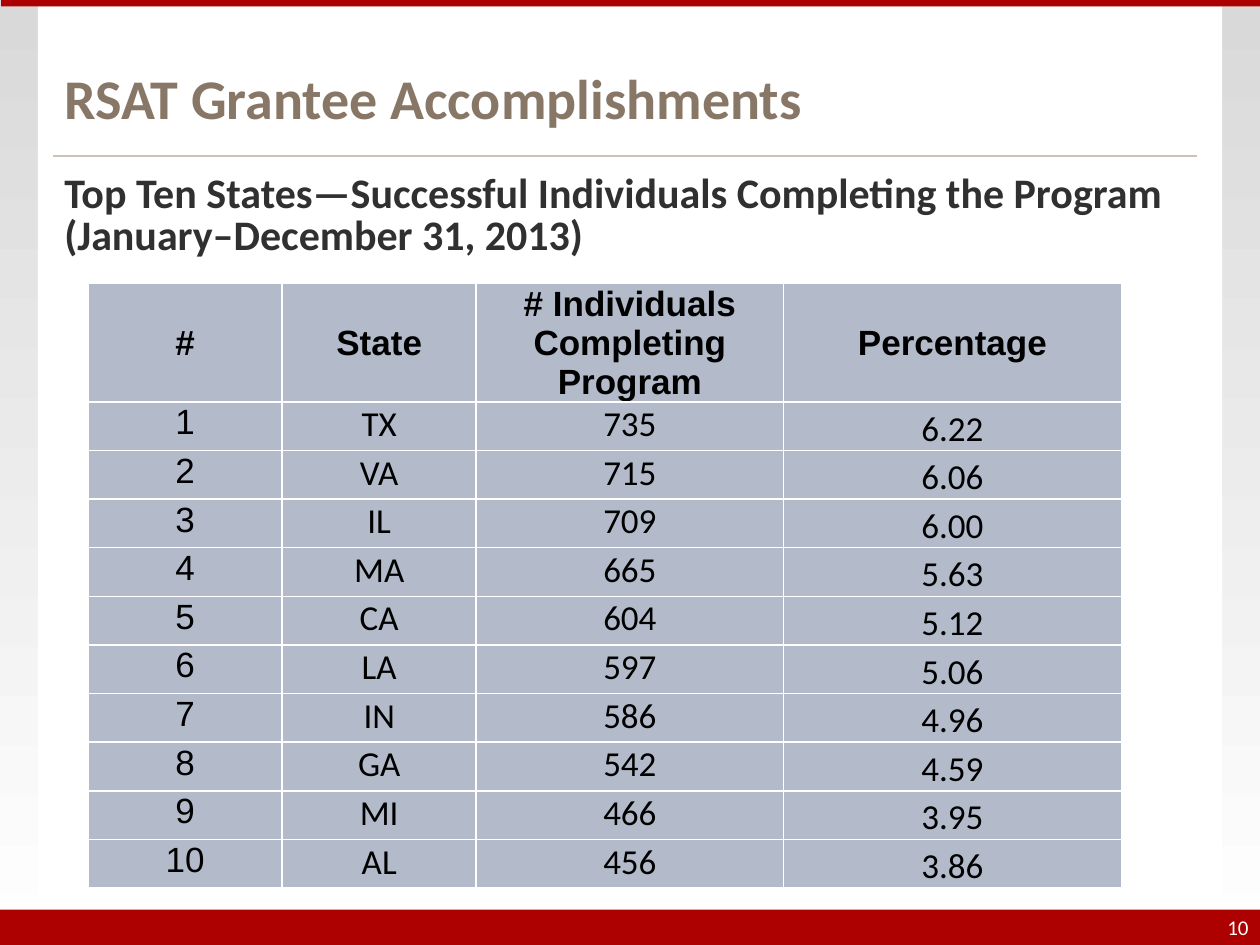
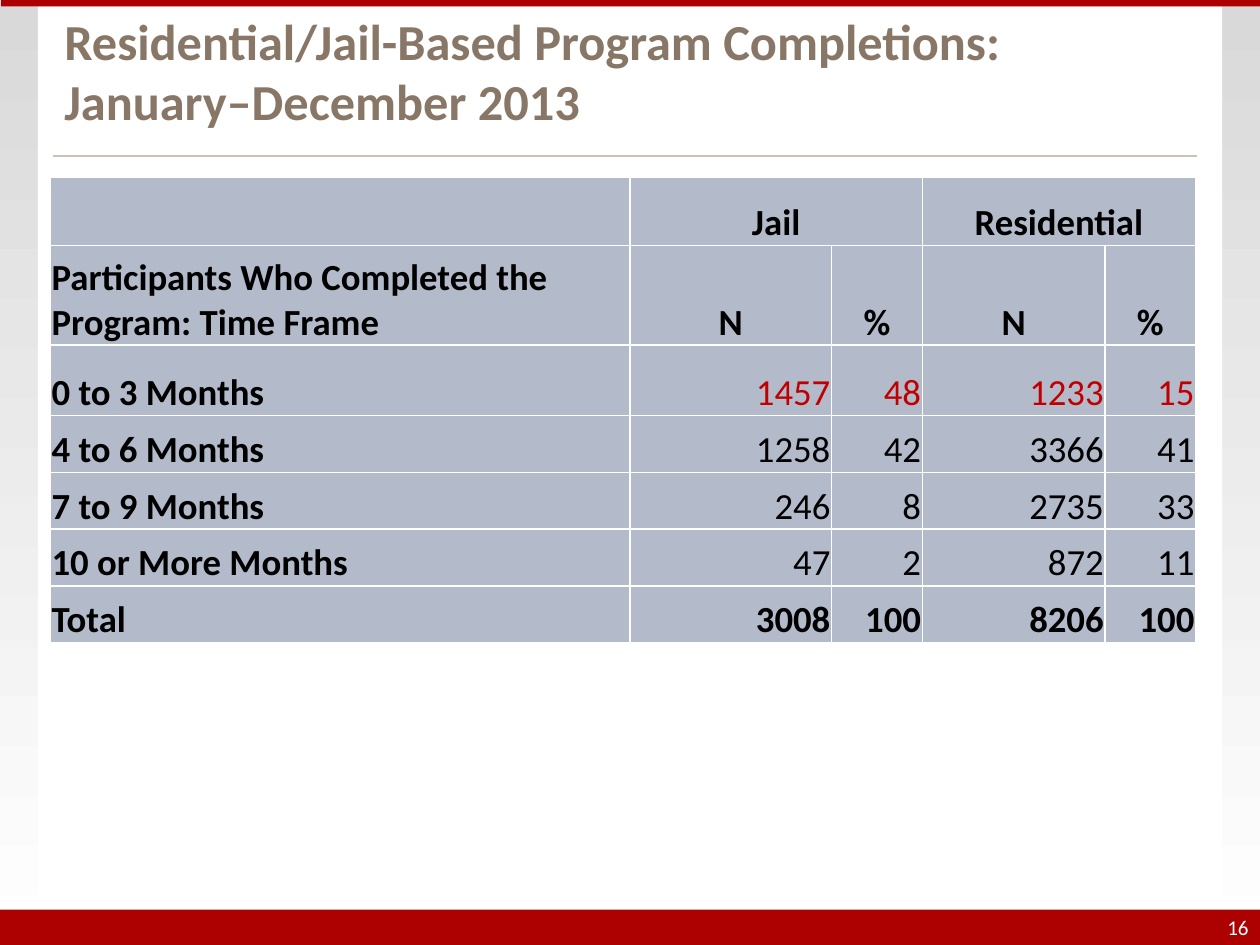
from lxml.etree import SubElement
from pptx import Presentation
from pptx.dml.color import RGBColor
from pptx.enum.shapes import MSO_CONNECTOR, MSO_SHAPE
from pptx.enum.text import MSO_ANCHOR, MSO_AUTO_SIZE, PP_ALIGN
from pptx.oxml.ns import qn
from pptx.util import Inches, Pt

WHITE = RGBColor(0xFF, 0xFF, 0xFF)
BLACK = RGBColor(0x00, 0x00, 0x00)
GREY = RGBColor(0xD9, 0xD9, 0xD9)
BAND_RED = RGBColor(0xAD, 0x01, 0x01)
RULE_TAN = RGBColor(0xCB, 0xC2, 0xB9)
TITLE_BROWN = RGBColor(0x88, 0x77, 0x66)
BODY_GREY = RGBColor(0x30, 0x30, 0x30)
CELL_BLUE = RGBColor(0xB3, 0xBB, 0xCB)
HIGHLIGHT_RED = RGBColor(0xC0, 0x00, 0x00)

TITLE_AND_BODY, TITLE_ONLY = 1, 5
BOX_MARGINS = (0.09, 0.04, 0.09, 0.04)
CELL_MARGINS = (0.01, 0.01, 0.01, 0)

BANDS = [
    ((0.3, 0.05, 9.4, 7.45), WHITE),
    ((0, 7.22, 10, 0.28), BAND_RED),
    ((0.01, 0, 10, 0.05), BAND_RED),
]

STATES_SUBTITLE = "Top Ten States—Successful Individuals Completing the Program (January–December 31, 2013)"
STATES_HEADER = ("#", "State", "# Individuals Completing Program", "Percentage")
STATES = [
    ("TX", "735", "6.22"),
    ("VA", "715", "6.06"),
    ("IL", "709", "6.00"),
    ("MA", "665", "5.63"),
    ("CA", "604", "5.12"),
    ("LA", "597", "5.06"),
    ("IN", "586", "4.96"),
    ("GA", "542", "4.59"),
    ("MI", "466", "3.95"),
    ("AL", "456", "3.86"),
]

COMPLETIONS = [
    ("", "Jail", "", "Residential", ""),
    ("Participants Who Completed the Program: Time Frame", "N", "%", "N", "%"),
    ("0 to 3 Months", "1457", "48", "1233", "15"),
    ("4 to 6 Months", "1258", "42", "3366", "41"),
    ("7 to 9 Months", "246", "8", "2735", "33"),
    ("10 or More Months", "47", "2", "872", "11"),
    ("Total", "3008", "100", "8206", "100"),
]
HEADER_ROWS = 2
HIGHLIGHT_ROW = 2


def write(frame, text, size=20, color=BLACK, font="Calibri", bold=False, align=PP_ALIGN.LEFT, line_spacing=None):
    paragraph = frame.paragraphs[0]
    paragraph.text = text
    paragraph.alignment = align
    paragraph.space_before = Pt(0)
    if line_spacing:
        paragraph.line_spacing = line_spacing
    paragraph.font.size = Pt(size)
    paragraph.font.name = font
    paragraph.font.bold = bold
    paragraph.font.color.rgb = color
    return paragraph


def set_margins(holder, margins, anchor):
    sides = [Inches(margin) for margin in margins]
    holder.margin_left, holder.margin_top, holder.margin_right, holder.margin_bottom = sides
    holder.vertical_anchor = anchor


def fill_box(shape, box, text, anchor=MSO_ANCHOR.TOP, **text_format):
    shape.left, shape.top, shape.width, shape.height = [Inches(length) for length in box]
    frame = shape.text_frame
    frame.word_wrap = True
    frame.auto_size = MSO_AUTO_SIZE.NONE
    set_margins(frame, BOX_MARGINS, anchor)
    return write(frame, text, **text_format)


def decorate_master(presentation, slide):
    master = presentation.slide_master
    background = master.background.fill
    background.gradient()
    background.gradient_angle = 270
    for stop, color, position in zip(background.gradient_stops, (GREY, WHITE), (0, 1)):
        stop.color.rgb = color
        stop.position = position

    decorations = []
    for box, color in BANDS:
        band = slide.shapes.add_shape(MSO_SHAPE.RECTANGLE, *[Inches(length) for length in box])
        band.shadow.inherit = False
        band.fill.solid()
        band.fill.fore_color.rgb = color
        band.line.fill.background()
        decorations.append(band)

    rule = slide.shapes.add_connector(
        MSO_CONNECTOR.STRAIGHT, Inches(0.42), Inches(1.24), Inches(9.5), Inches(1.24))
    rule.line.color.rgb = RULE_TAN
    rule.line.width = Pt(1.25)
    SubElement(rule.element.spPr, qn("a:effectLst"))
    decorations.append(rule)

    for index, shape in enumerate(decorations):
        shape.element.xpath(".//p:cNvPr")[0].set("id", str(100 + index))
        master.shapes.element.insert(2 + index, shape.element)


def add_titled_slide(presentation, layout_index, title, number, title_size):
    slide = presentation.slides.add_slide(presentation.slide_layouts[layout_index])
    fill_box(slide.shapes.title, (0.42, 0.25, 9.08, 0.83), title, MSO_ANCHOR.BOTTOM,
             size=title_size, color=TITLE_BROWN, bold=True)
    number_box = slide.shapes.add_textbox(0, 0, 0, 0)
    fill_box(number_box, (9.38, 7.22, 0.62, 0.28), number, MSO_ANCHOR.MIDDLE,
             size=12, color=WHITE, align=PP_ALIGN.RIGHT)
    return slide


def add_grid(slide, left, top, columns, rows):
    table = slide.shapes.add_table(
        len(rows), len(columns), Inches(left), Inches(top),
        Inches(sum(columns)), Inches(sum(rows))).table
    table.first_row = table.horz_banding = False
    for column, width in zip(table.columns, columns):
        column.width = Inches(width)
    for row, height in zip(table.rows, rows):
        row.height = Inches(height)
    for cell in table.iter_cells():
        properties = cell._tc.get_or_add_tcPr()
        for side in ("a:lnL", "a:lnR", "a:lnT", "a:lnB"):
            border = SubElement(properties, qn(side), w=str(Pt(1)))
            SubElement(SubElement(border, qn("a:solidFill")), qn("a:srgbClr"), val=str(WHITE))
        cell.fill.solid()
        cell.fill.fore_color.rgb = CELL_BLUE
    return table


def fill_cell(cell, text, anchor, **text_format):
    set_margins(cell, CELL_MARGINS, anchor)
    write(cell.text_frame, text, **text_format)


def add_states_table(slide):
    row_height = 3.86 / len(STATES)
    table = add_grid(slide, 0.7, 2.25, (1.54, 1.54, 2.44, 2.68), [0.94] + [row_height] * len(STATES))
    for column, text in enumerate(STATES_HEADER):
        fill_cell(table.cell(0, column), text, MSO_ANCHOR.MIDDLE,
                  font="Arial", bold=True, align=PP_ALIGN.CENTER)
    for rank, state in enumerate(STATES, start=1):
        for column, text in enumerate((str(rank), *state)):
            anchor = MSO_ANCHOR.BOTTOM if column == 3 else MSO_ANCHOR.TOP
            font = "Arial" if column == 0 else "Calibri"
            fill_cell(table.cell(rank, column), text, anchor, font=font, align=PP_ALIGN.CENTER)


def add_completions_table(slide):
    table = add_grid(slide, 0.4, 1.41, (4.6, 1.6, 0.72, 1.45, 0.72), [0.54, 0.79, 0.56] + [0.45] * 4)
    for column in (1, 3):
        table.cell(0, column).merge(table.cell(0, column + 1))
    for row, values in enumerate(COMPLETIONS):
        is_header = row < HEADER_ROWS
        for column, text in enumerate(values):
            if not text:
                continue
            is_label = column == 0
            number_align = PP_ALIGN.CENTER if is_header else PP_ALIGN.RIGHT
            fill_cell(
                table.cell(row, column), text, MSO_ANCHOR.BOTTOM, size=21,
                bold=is_header or is_label or values[0] == "Total",
                color=HIGHLIGHT_RED if row == HIGHLIGHT_ROW and not is_label else BLACK,
                align=PP_ALIGN.LEFT if is_label else number_align)


def main():
    presentation = Presentation()
    presentation.slide_width, presentation.slide_height = Inches(10), Inches(7.5)

    states_slide = add_titled_slide(
        presentation, TITLE_AND_BODY, "RSAT Grantee Accomplishments", "10", 32)
    decorate_master(presentation, states_slide)
    subtitle = fill_box(
        states_slide.placeholders[1], (0.42, 1.35, 9.08, 5.87), STATES_SUBTITLE,
        size=24, color=BODY_GREY, bold=True, line_spacing=Pt(24))
    subtitle.space_after = Pt(6)
    properties = subtitle._p.get_or_add_pPr()
    properties.set("marL", "0")
    properties.set("indent", "0")
    bullet = SubElement(properties, qn("a:buNone"))
    properties.find(qn("a:spcAft")).addnext(bullet)
    add_states_table(states_slide)

    completions_slide = add_titled_slide(
        presentation, TITLE_ONLY,
        "Residential/Jail-Based Program Completions: January–December 2013", "16", 28.8)
    add_completions_table(completions_slide)

    presentation.save("out.pptx")


if __name__ == "__main__":
    main()
